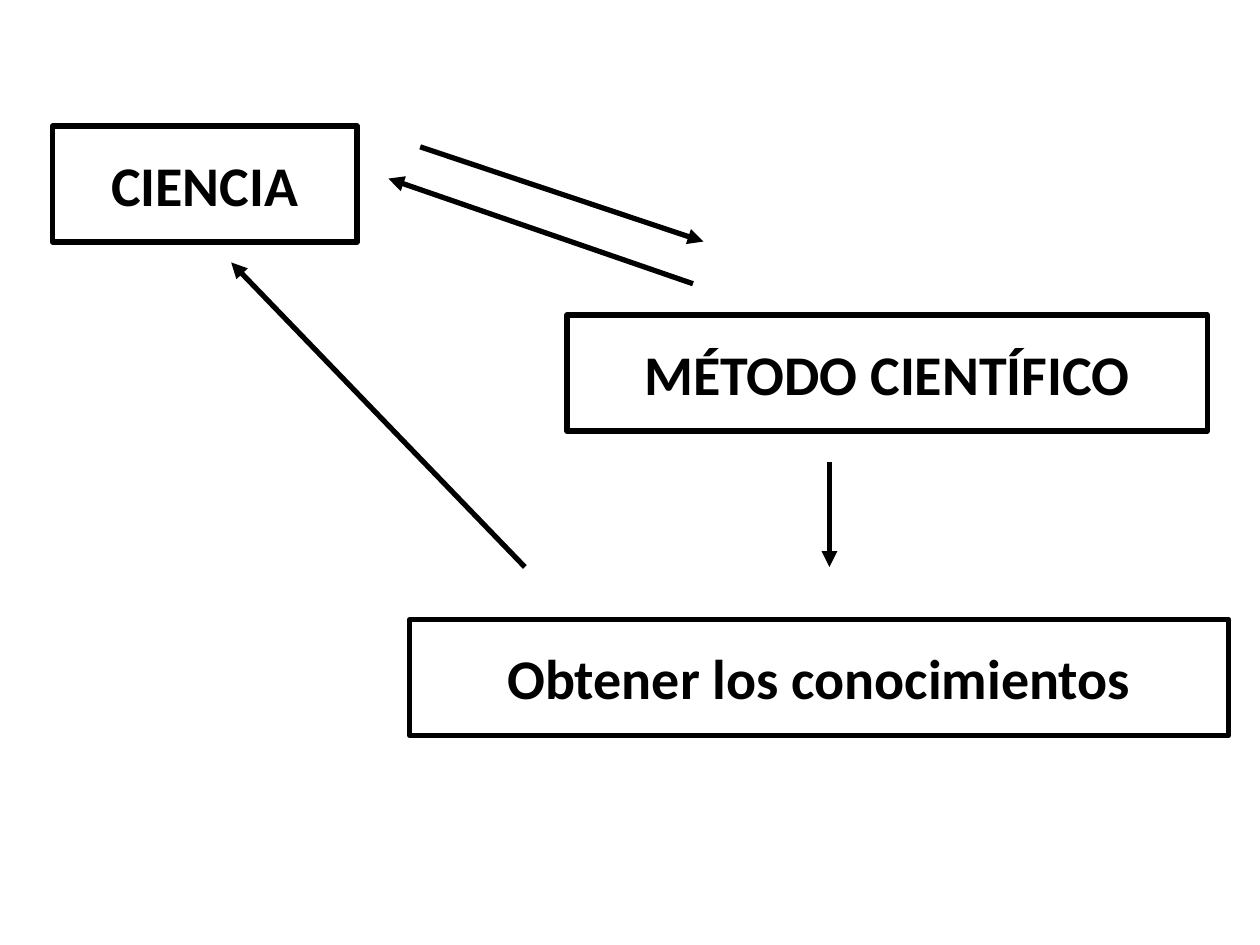
"""Build a slide showing the cycle between science, scientific method and knowledge."""
import pptx
import pptx.dml.color
import pptx.enum.shapes
import pptx.enum.text
import pptx.oxml.ns
import pptx.util
from lxml import etree

Cm = pptx.util.Cm
Pt = pptx.util.Pt
COLORS = {"ink": "000000", "paper": "FFFFFF"}
INK = pptx.dml.color.RGBColor.from_string(COLORS["ink"])
LINE_WIDTH = Pt(3)
BOX_HEIGHT = 2.34

concepts = [
    ("CIENCIA", 1.06, 2.54, 6.14),
    ("MÉTODO CIENTÍFICO", 11.43, 6.35, 12.91),
    ("Obtener los conocimientos", 8.26, 12.49, 16.51),
]
arrows = [
    (8.47, 2.96, 14.18, 4.87),
    (13.97, 5.72, 7.83, 3.6),
    (16.72, 9.31, 16.72, 11.43),
    (10.58, 11.43, 4.66, 5.29),
]

deck = pptx.Presentation()
deck.slide_width = Cm(25.4)
deck.slide_height = Cm(19.05)
page = deck.slides.add_slide(deck.slide_layouts.get_by_name("Blank"))
page.background.fill.solid()
page.background.fill.fore_color.rgb = pptx.dml.color.RGBColor.from_string(COLORS["paper"])

for label, left, top, width in concepts:
    box = page.shapes.add_shape(
        pptx.enum.shapes.MSO_SHAPE.RECTANGLE, Cm(left), Cm(top), Cm(width), Cm(BOX_HEIGHT)
    )
    box.shadow.inherit = False
    box.fill.background()
    box.line.color.rgb = INK
    box.line.width = LINE_WIDTH
    frame = box.text_frame
    frame.word_wrap = False
    frame.vertical_anchor = pptx.enum.text.MSO_ANCHOR.MIDDLE
    para = frame.paragraphs[0]
    para.alignment = pptx.enum.text.PP_ALIGN.CENTER
    span = para.add_run()
    span.text = label
    span.font.name = "Calibri"
    span.font.size = Pt(32)
    span.font.bold = True
    span.font.color.rgb = INK

for start_x, start_y, end_x, end_y in arrows:
    arrow = page.shapes.add_connector(
        pptx.enum.shapes.MSO_CONNECTOR.STRAIGHT, Cm(start_x), Cm(start_y), Cm(end_x), Cm(end_y)
    )
    arrow.line.color.rgb = INK
    arrow.line.width = LINE_WIDTH
    outline = arrow.line._get_or_add_ln()
    etree.SubElement(outline, pptx.oxml.ns.qn("a:tailEnd"), type="triangle")
    etree.SubElement(arrow._element.spPr, pptx.oxml.ns.qn("a:effectLst"))

deck.save("out.pptx")
